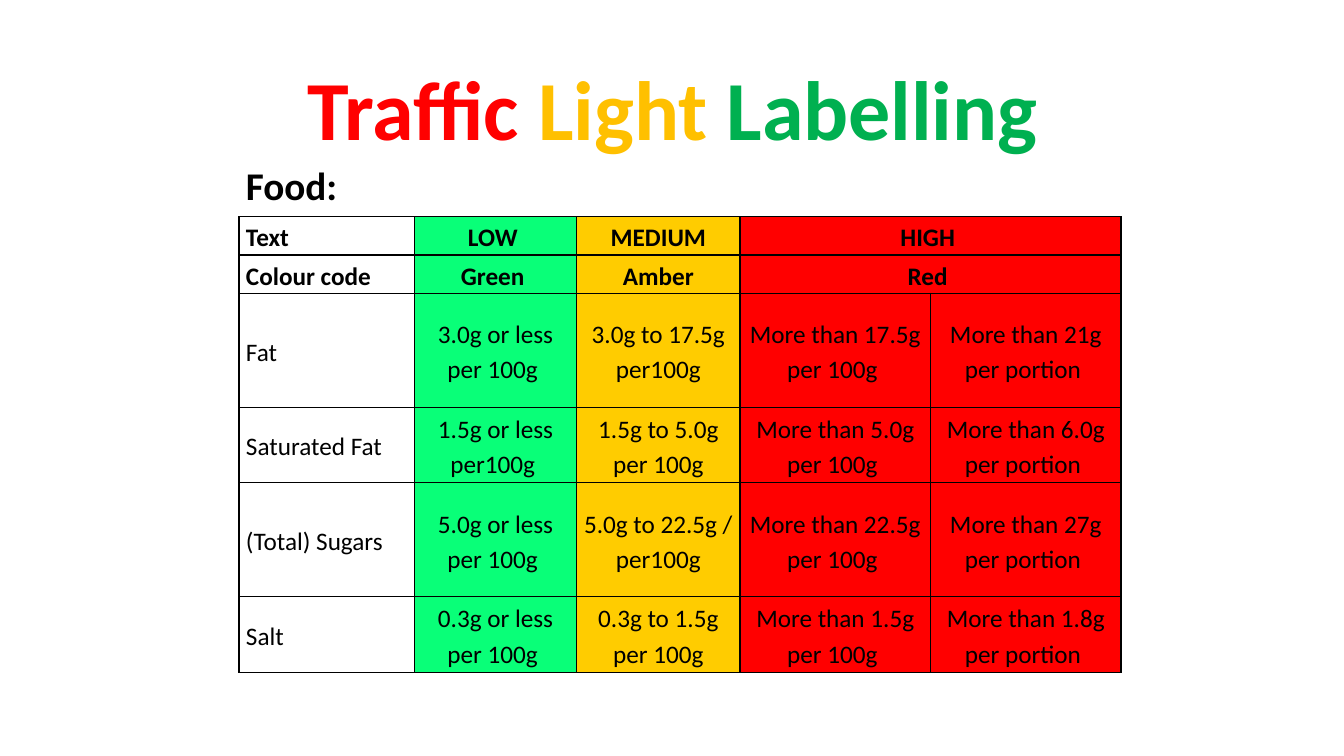
from dataclasses import dataclass

import pptx
import pptx.dml.color
import pptx.enum.text
import pptx.oxml
import pptx.oxml.ns
import pptx.util

Inches = pptx.util.Inches
Pt = pptx.util.Pt
RGBColor = pptx.dml.color.RGBColor
Align = pptx.enum.text.PP_ALIGN
Anchor = pptx.enum.text.MSO_ANCHOR

BLACK = RGBColor(0x00, 0x00, 0x00)
RED = RGBColor(0xFF, 0x00, 0x00)
GOLD = RGBColor(0xFF, 0xC0, 0x00)
LEAF = RGBColor(0x00, 0xB0, 0x50)
GREEN = RGBColor(0x09, 0xFF, 0x78)
AMBER = RGBColor(0xFF, 0xCC, 0x00)
FONT = "Calibri"


@dataclass
class Word:
    text: str
    color: RGBColor


@dataclass
class Label:
    words: list[Word]
    left: float
    top: float
    width: float
    height: float
    size: int
    align: Align
    anchor: Anchor
    space: float


@dataclass
class Column:
    width: float
    fill: RGBColor | None
    align: Align


@dataclass
class Row:
    height: float
    texts: list[str]
    head: bool = False  # bold, with the last two cells merged


LABELS = [
    Label([Word("Traffic ", RED), Word("Light ", GOLD), Word("Labelling", LEAF)],
          0.92, 0.4, 11.5, 1.45, 60, Align.CENTER, Anchor.MIDDLE, 0.9),
    Label([Word("Food:", BLACK)],
          2.34, 1.55, 2.91, 0.57, 28, Align.LEFT, Anchor.TOP, 1.0),
]

COLUMNS = [
    Column(1.74, None, Align.LEFT),
    Column(1.61, GREEN, Align.CENTER),
    Column(1.62, AMBER, Align.CENTER),
    Column(1.89, RED, Align.CENTER),
    Column(1.89, RED, Align.CENTER),
]

ROWS = [
    Row(0.38, ["Text", "LOW ", "MEDIUM", "HIGH ", ""], True),
    Row(0.38, ["Colour code", "Green ", "Amber", "Red ", ""], True),
    Row(1.13, ["Fat", "3.0g or less per 100g ", "3.0g to 17.5g per100g",
               "More than 17.5g per 100g ", "More than 21g per portion "]),
    Row(0.75, ["Saturated Fat", "1.5g or less per100g ", "1.5g to 5.0g per 100g",
               "More than 5.0g per 100g ", "More than 6.0g per portion "]),
    Row(1.13, ["(Total) Sugars", "5.0g or less per 100g ", "5.0g to 22.5g / per100g",
               "More than 22.5g per 100g ", "More than 27g per portion "]),
    Row(0.75, ["Salt", "0.3g or less per 100g ", "0.3g to 1.5g per 100g",
               "More than 1.5g per 100g ", "More than 1.8g per portion "]),
]


def add_label(slide, label: Label) -> None:
    box = slide.shapes.add_textbox(Inches(label.left), Inches(label.top),
                                   Inches(label.width), Inches(label.height))
    frame = box.text_frame
    frame.word_wrap = True
    frame.vertical_anchor = label.anchor
    para = frame.paragraphs[0]
    para.alignment = label.align
    para.line_spacing = label.space
    para.font.name = FONT
    para.font.size = Pt(label.size)
    para.font.bold = True
    for word in label.words:
        run = para.add_run()
        run.text = word.text
        run.font.color.rgb = word.color


def add_edges(cell) -> None:
    props = cell._tc.get_or_add_tcPr()
    for side in ("L", "R", "T", "B"):
        props.append(pptx.oxml.parse_xml(
            f'<a:ln{side} {pptx.oxml.ns.nsdecls("a")} w="{Pt(1)}">'
            f'<a:solidFill><a:srgbClr val="{BLACK}"/></a:solidFill></a:ln{side}>'))


def fill_cell(cell, text: str, column: Column, bold: bool) -> None:
    cell.margin_left = cell.margin_right = Inches(0.07)
    cell.margin_top = cell.margin_bottom = 0
    cell.vertical_anchor = Anchor.MIDDLE
    # Borders precede the fill in the cell's properties
    add_edges(cell)
    if column.fill is None:
        cell.fill.background()
    else:
        cell.fill.solid()
        cell.fill.fore_color.rgb = column.fill
    para = cell.text_frame.paragraphs[0]
    if text:
        para.add_run().text = text
    para.alignment = column.align
    para.line_spacing = 1.15
    para.font.name = FONT
    para.font.size = Pt(18)
    para.font.bold = bold
    para.font.color.rgb = BLACK


def add_grid(slide) -> None:
    frame = slide.shapes.add_table(
        len(ROWS), len(COLUMNS), Inches(2.37), Inches(2.15),
        Inches(sum(column.width for column in COLUMNS)),
        Inches(sum(row.height for row in ROWS)))
    table = frame.table
    table.first_row = False
    table.horz_banding = False
    for x, column in enumerate(COLUMNS):
        table.columns[x].width = Inches(column.width)
    for y, row in enumerate(ROWS):
        table.rows[y].height = Inches(row.height)
        for x, (text, column) in enumerate(zip(row.texts, COLUMNS)):
            fill_cell(table.cell(y, x), text, column, row.head)
        if row.head:
            table.cell(y, 3).merge(table.cell(y, 4))


def main() -> None:
    deck = pptx.Presentation()
    deck.slide_width = Inches(13.33)
    deck.slide_height = Inches(7.5)
    slide = deck.slides.add_slide(deck.slide_layouts[6])

    # Traffic light limits
    add_grid(slide)

    # Title and heading
    for label in LABELS:
        add_label(slide, label)

    deck.save("out.pptx")


if __name__ == "__main__":
    main()
